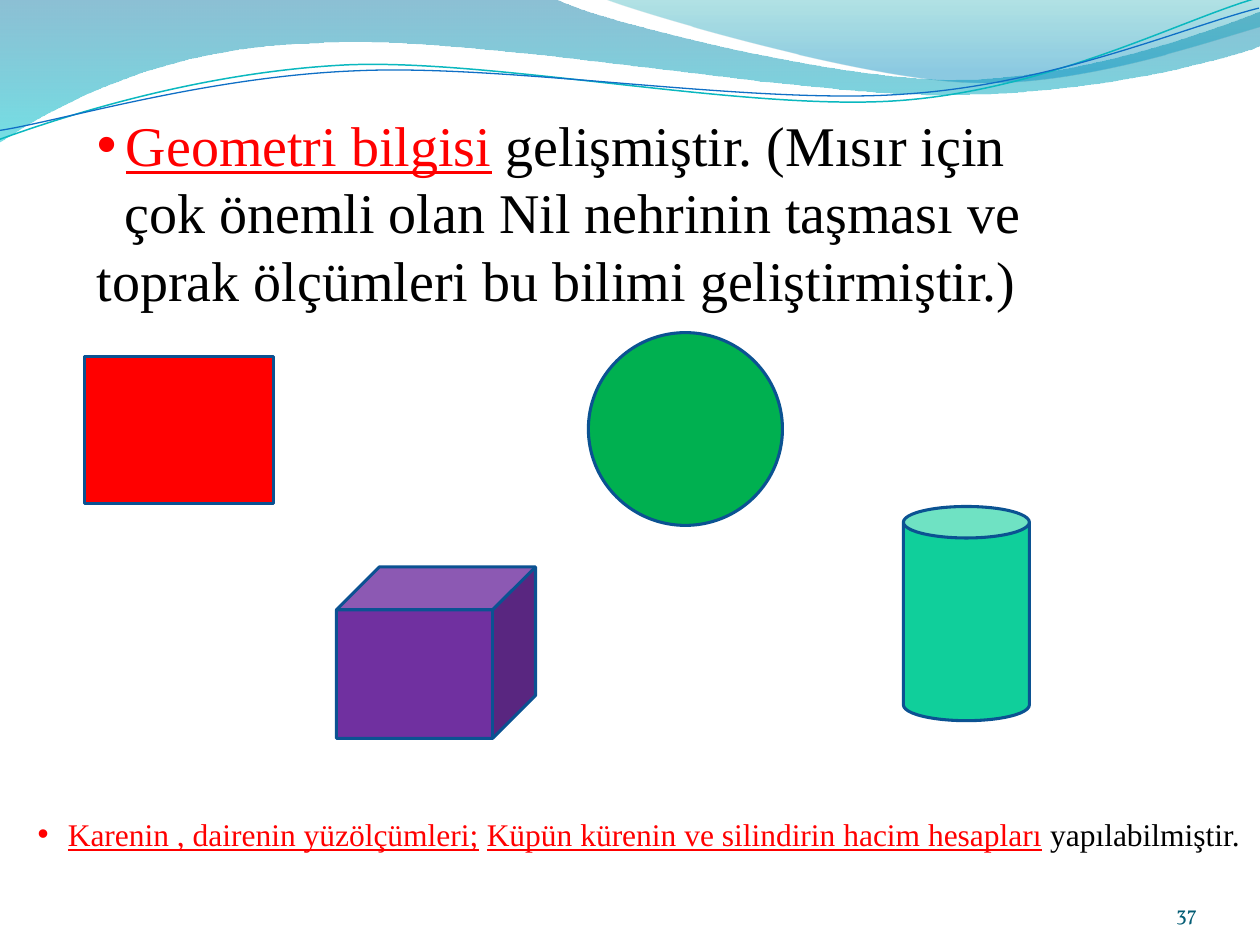
from dataclasses import dataclass

import lxml.etree
import pptx
import pptx.dml.color
import pptx.enum.shapes
import pptx.enum.text
import pptx.oxml
import pptx.oxml.ns
import pptx.util
from pptx.util import Inches


@dataclass(frozen=True)
class Theme:
    red: str = "FF0000"
    black: str = "000000"
    green: str = "00B050"
    purple: str = "7030A0"
    mint: str = "10CF9B"
    outline: str = "0B5292"
    number: str = "045D75"
    teal_line: str = "0AB8BF"
    blue_line: str = "0F6FC6"
    font: str = "Times New Roman"
    number_font: str = "Vollkorn"
    title_size: int = 32
    note_size: int = 18
    number_size: int = 12


theme = Theme()
rgb = pptx.dml.color.RGBColor.from_string
qn = pptx.oxml.ns.qn
namespace = pptx.oxml.ns.nsdecls("a")

presentation = pptx.Presentation()
presentation.slide_width = Inches(10)
presentation.slide_height = Inches(7.5)
slide = presentation.slides.add_slide(presentation.slide_layouts[6])


def add_wave(start, segments, close):
    """Draw lines (x, y) and Bézier curves (six numbers) as one freeform."""
    builder = slide.shapes.build_freeform(Inches(start[0]), Inches(start[1]))
    for segment in segments:
        pairs = zip(segment[::2], segment[1::2])
        builder.add_line_segments([(Inches(x), Inches(y)) for x, y in pairs], close=False)
    if close:
        builder.add_line_segments([], close=True)
    shape = builder.convert_to_shape()
    shape.shadow.inherit = False
    lines = iter(shape._element.spPr.findall(".//" + qn("a:lnTo")))
    for segment in segments:
        first = next(lines)
        if len(segment) == 6:
            curve = lxml.etree.Element(qn("a:cubicBezTo"))
            first.addprevious(curve)
            for line in (first, next(lines), next(lines)):
                curve.append(line[0])
                line.getparent().remove(line)
    return shape


# Header bands: start, segments, gradient stops (position, colour, opacity %)
bands = [
    ((0, 0),
     [(4.4, -0.01), (4.76, 0.17, 6.64, 0.63, 7.58, 0.63),
      (8.53, 0.63, 9.58, 0.26, 10, 0.09), (10.01, 0.36),
      (9.83, 0.44, 8.7, 0.76, 7.46, 0.75), (6.22, 0.75, 3.82, 0.28, 2.57, 0.34),
      (1.29, 0.36, 0.46, 0.83, -0.01, 1.13), (0, 0)],
     [(0, "0074A1", 45), (1, "00C6CF", 55)]),
    ((4.79, -0.01),
     [(5.09, 0.11, 6.82, 0.62, 7.69, 0.65), (8.56, 0.69, 9.61, 0.32, 10, 0.21),
      (10, 0), (4.79, -0.01)],
     [(0, "00A1A9", 30), (0.8, "008BBF", 45)]),
]
for start, segments, stops in bands:
    band = add_wave(start, segments, True)
    band.line.fill.background()
    band.fill.gradient()
    band.fill.gradient_angle = 270
    for stop, (position, color, opacity) in zip(band.fill.gradient_stops, stops):
        stop.position = position
        stop.color.rgb = rgb(color)
    color_elements = band._element.spPr.findall(".//" + qn("a:srgbClr"))
    for element, (position, color, opacity) in zip(color_elements, stops):
        element.append(pptx.oxml.parse_xml(
            f'<a:alpha {namespace} val="{opacity * 1000}"/>'))

# Strands are laid out level, then tilted
strands = [
    ((-0.02, 0.87),
     [(0.47, 0.72, 1.58, 0.41, 2.77, 0.41), (3.95, 0.42, 5.91, 0.93, 7.12, 0.9),
      (8.32, 0.87, 9.4, 0.36, 10, 0.22)], theme.teal_line, 0.85),
    ((-0.02, 0.8),
     [(0.46, 0.75, 1.64, 0.45, 2.83, 0.46), (4.03, 0.46, 5.96, 0.88, 7.16, 0.85),
      (8.35, 0.83, 9.42, 0.42, 10.01, 0.3)], theme.blue_line, 0.75),
]
for start, segments, color, width in strands:
    strand = add_wave(start, segments, False)
    strand.rotation = 357.3
    strand.fill.background()
    strand.line.color.rgb = rgb(color)
    strand.line.width = pptx.util.Pt(width)

number_box = slide.shapes.add_textbox(Inches(8.67), Inches(6.95), Inches(0.83), Inches(0.4))
frame = number_box.text_frame
frame.word_wrap = True
frame.margin_left = frame.margin_right = frame.margin_top = frame.margin_bottom = 0
frame.vertical_anchor = pptx.enum.text.MSO_ANCHOR.BOTTOM
paragraph = frame.paragraphs[0]
paragraph.text = "37"
paragraph.alignment = pptx.enum.text.PP_ALIGN.RIGHT
paragraph.font.size = pptx.util.Pt(theme.number_size)
paragraph.font.name = theme.number_font
paragraph.font.color.rgb = rgb(theme.number)


def add_statement(box, size, paragraphs):
    """Add text; each paragraph is (bulleted, indent, [(text, colour, underlined)])."""
    frame = slide.shapes.add_textbox(*map(Inches, box)).text_frame
    frame.word_wrap = True
    frame.auto_size = pptx.enum.text.MSO_AUTO_SIZE.SHAPE_TO_FIT_TEXT
    for index, (bulleted, indent, runs) in enumerate(paragraphs):
        paragraph = frame.add_paragraph() if index else frame.paragraphs[0]
        paragraph.font.size = pptx.util.Pt(size)
        paragraph.font.name = theme.font
        properties = paragraph._p.get_or_add_pPr()
        properties.set("marL", str(Inches(indent) if bulleted else 0))
        properties.set("indent", str(Inches(-indent if bulleted else indent)))
        if bulleted:
            defaults = properties.find(qn("a:defRPr"))
            for tag in ('buFont {} typeface="Arial"', 'buChar {} char="•"'):
                defaults.addprevious(
                    pptx.oxml.parse_xml(f"<a:{tag.format(namespace)}/>"))
        for text, color, underlined in runs:
            run = paragraph.add_run()
            run.text = text
            run.font.color.rgb = rgb(color)
            run.font.underline = underlined


add_statement((0.67, 0.83, 8.25, 1.72), theme.title_size, [
    (True, 0.23, [("Geometri bilgisi", theme.red, True),
                  (" ", theme.red, False),
                  ("gelişmiştir. (Mısır için", theme.black, False)]),
    (False, 0.22, [("çok önemli olan Nil nehrinin taşması ve toprak ölçümleri "
                    "bu bilimi geliştirmiştir.)", theme.black, False)]),
])

kinds = pptx.enum.shapes.MSO_SHAPE
solids = [
    (kinds.RECTANGLE, (0.67, 2.83, 1.5, 1.17), theme.red),
    (kinds.OVAL, (4.67, 2.64, 1.54, 1.53), theme.green),
    (kinds.CUBE, (2.67, 4.5, 1.58, 1.36), theme.purple),
    (kinds.CAN, (7.17, 4.02, 1, 1.7), theme.mint),
]
for kind, box, color in solids:
    solid = slide.shapes.add_shape(kind, *map(Inches, box))
    solid.shadow.inherit = False
    solid.fill.solid()
    solid.fill.fore_color.rgb = rgb(color)
    solid.line.color.rgb = rgb(theme.outline)
    solid.line.width = pptx.util.Pt(1.75)

add_statement((0.2, 6.42, 9.8, 0.4), theme.note_size, [
    (True, 0.24, [("Karenin , dairenin yüzölçümleri;", theme.red, True),
                  (" ", theme.red, False),
                  ("Küpün kürenin ve silindirin hacim hesapları", theme.red, True),
                  (" ", theme.red, False),
                  ("yapılabilmiştir.", theme.black, False)]),
])

presentation.save("out.pptx")
